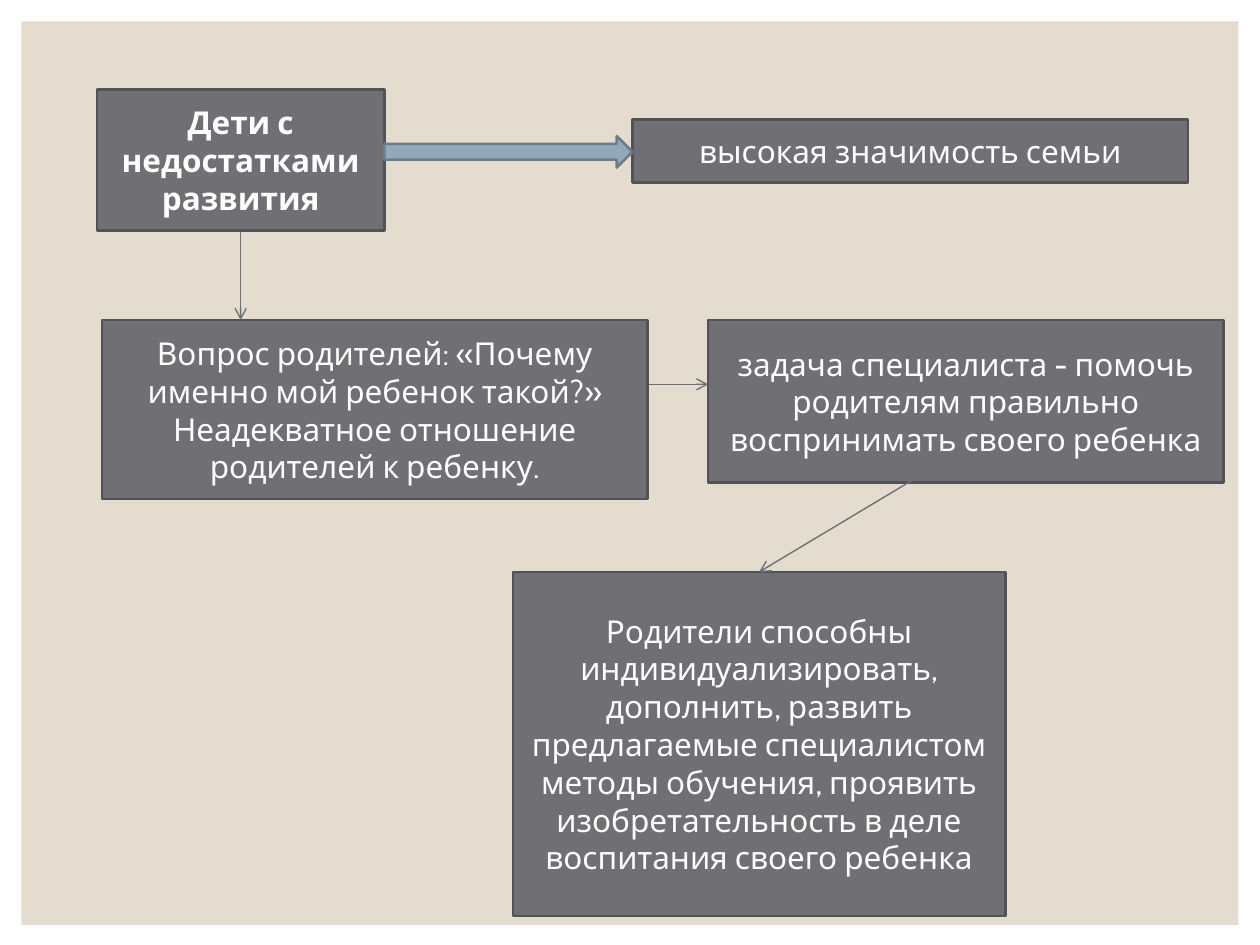
from dataclasses import dataclass

from lxml import etree
from pptx import Presentation
from pptx import util as u
from pptx.dml.color import RGBColor
from pptx.enum import shapes, text
from pptx.oxml import ns


@dataclass(frozen=True)
class Theme:
    panel: str = "E3DCCF"
    box: str = "6F6F74"
    box_line: str = "525256"
    arrow: str = "92A9B9"
    arrow_line: str = "6C7D89"
    text: str = "FFFFFF"
    font: str = "Cabin"
    size: float = 18
    border: float = 1.5
    thin: float = 0.79


THEME = Theme()
RECT = shapes.MSO_SHAPE.RECTANGLE
TOP, BOTTOM = 0, 2


def rgb(value):
    return RGBColor.from_string(value)


def add_block(slide, kind, box, fill, line=None):
    sp = slide.shapes.add_shape(kind, *map(u.Inches, box))
    sp.shadow.inherit = False
    sp.fill.solid()
    sp.fill.fore_color.rgb = rgb(fill)
    if line:
        sp.line.color.rgb = rgb(line)
        sp.line.width = u.Pt(THEME.border)
    else:
        sp.line.fill.background()
    return sp


def add_text_box(slide, box, wording, bold=False):
    sp = add_block(slide, RECT, box, THEME.box, THEME.box_line)
    tf = sp.text_frame
    tf.word_wrap = True
    tf.vertical_anchor = text.MSO_ANCHOR.MIDDLE
    p = tf.paragraphs[0]
    p.alignment = text.PP_ALIGN.CENTER
    r = p.add_run()
    r.text = wording
    r.font.name = THEME.font
    r.font.size = u.Pt(THEME.size)
    r.font.bold = bold
    r.font.color.rgb = rgb(THEME.text)
    return sp


def add_thin_arrow(slide, start, end):
    cx = slide.shapes.add_connector(
        shapes.MSO_CONNECTOR.STRAIGHT, *map(u.Inches, start + end))
    cx.line.color.rgb = rgb(THEME.box)
    cx.line.width = u.Pt(THEME.thin)
    etree.SubElement(cx.line._get_or_add_ln(), ns.qn("a:tailEnd"), type="arrow")
    etree.SubElement(cx._element.spPr, ns.qn("a:effectLst"))
    return cx


def add_family_scheme(slide, box):
    add_block(slide, RECT, box, THEME.panel)
    children = add_text_box(slide, (0.77, 0.71, 2.28, 1.12),
                            "Дети с недостатками развития", bold=True)
    add_text_box(slide, (5.02, 0.95, 4.41, 0.5), "высокая значимость семьи")
    add_text_box(slide, (0.81, 2.54, 4.33, 1.42),
                 "Вопрос родителей: «Почему именно мой ребенок такой?» "
                 "Неадекватное отношение родителей к ребенку.")
    to_question = add_thin_arrow(slide, (1.91, 1.83), (1.91, 2.54))
    to_question.begin_connect(children, BOTTOM)
    add_text_box(slide, (5.62, 2.54, 4.09, 1.29),
                 "задача специалиста - помочь родителям правильно "
                 "воспринимать своего ребенка")
    add_thin_arrow(slide, (5.15, 3.05), (5.62, 3.05))
    add_block(slide, shapes.MSO_SHAPE.RIGHT_ARROW, (3.05, 1.08, 1.97, 0.25),
              THEME.arrow, THEME.arrow_line)
    parents = add_text_box(slide, (4.07, 4.54, 3.91, 2.73),
                           "Родители способны индивидуализировать, дополнить, "
                           "развить предлагаемые специалистом методы обучения, "
                           "проявить изобретательность в деле воспитания "
                           "своего ребенка")
    to_parents = add_thin_arrow(slide, (7.66, 3.56), (6.02, 4.54))
    to_parents.end_connect(parents, TOP)


def main():
    prs = Presentation()
    prs.slide_width, prs.slide_height = u.Inches(10), u.Inches(7.5)
    slide = prs.slides.add_slide(prs.slide_layouts[6])
    add_family_scheme(slide, (0.17, 0.17, 9.66, 7.17))
    prs.save("out.pptx")


if __name__ == "__main__":
    main()
